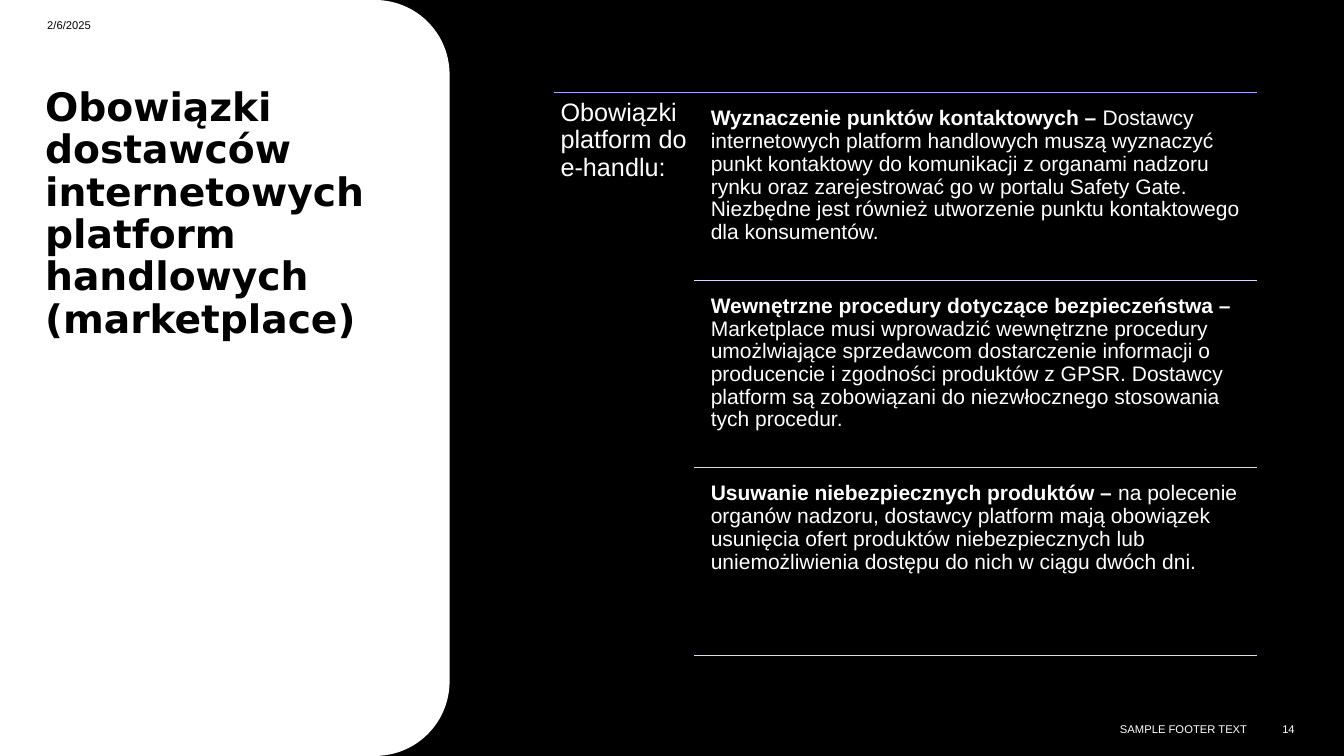
"""Builds the slide on the duties of online marketplace providers."""
from dataclasses import dataclass
from math import cos, pi, sin

from lxml.etree import SubElement
from pptx import Presentation
from pptx.dml.color import RGBColor as Color
from pptx.enum.shapes import MSO_CONNECTOR as Link
from pptx.enum.text import MSO_ANCHOR as Anchor, PP_ALIGN as Align
from pptx.oxml.ns import qn
from pptx.slide import Slide
from pptx.util import Inches, Pt

HUES = {"back": "000000", "panel": "FFFFFF", "dark": "000000",
        "light": "FFFFFF", "top": "B8A0F8", "rule": "DFD6FC"}
WIDE, HIGH = 13.33, 7.5
PANEL, ROUND = 4.46, 0.74
LEFT, SPLIT, RIGHT = 5.49, 6.88, 12.47
TOP, STEP = 0.92, 1.86


@dataclass
class Label:
    box: tuple[float, float, float, float]
    texts: tuple[str, ...]
    size: float
    hue: str = "light"
    font: str = "Arial"
    bold: bool = False
    pad: tuple[float, float] = (0.1, 0.05)
    anchor: Anchor = Anchor.TOP
    align: Align = Align.LEFT
    pitch: float = 1.0
    after: float = 0


@dataclass
class Rule:
    start: float
    level: float
    hue: str


DUTIES = (
    ("Wyznaczenie punktów kontaktowych –",
     " Dostawcy internetowych platform handlowych muszą wyznaczyć punkt "
     "kontaktowy do komunikacji z organami nadzoru rynku oraz zarejestrować "
     "go w portalu Safety Gate. Niezbędne jest również utworzenie punktu "
     "kontaktowego dla konsumentów."),
    ("Wewnętrzne procedury dotyczące bezpieczeństwa –",
     " Marketplace musi wprowadzić wewnętrzne procedury umożlwiające "
     "sprzedawcom dostarczenie informacji o producencie i zgodności produktów "
     "z GPSR. Dostawcy platform są zobowiązani do niezwłocznego stosowania "
     "tych procedur."),
    ("Usuwanie niebezpiecznych produktów –",
     " na polecenie organów nadzoru, dostawcy platform mają obowiązek "
     "usunięcia ofert produktów niebezpiecznych lub uniemożliwienia dostępu "
     "do nich w ciągu dwóch dni."),
)

LABELS = [
    Label((0.35, 0.82, 3.53, 5.95),
          ("Obowiązki dostawców internetowych platform handlowych (marketplace)",),
          28, "dark", "DejaVu Sans", True, pitch=0.9),
    Label((0.37, 0.07, 3, 0.35), ("2/6/2025",), 8, "dark",
          anchor=Anchor.MIDDLE, after=6),
    Label((8.03, 7.03, 4.44, 0.4), ("SAMPLE FOOTER TEXT",), 8,
          anchor=Anchor.MIDDLE, align=Align.RIGHT, after=6),
    Label((12.47, 7.03, 0.47, 0.4), ("14",), 8,
          anchor=Anchor.MIDDLE, align=Align.RIGHT, after=6),
    Label((LEFT, TOP, 1.4, 5.68), ("Obowiązki platform do e-handlu:",), 18,
          pad=(0.07, 0.07), pitch=0.9),
]
LABELS += [Label((6.99, TOP + 0.09 + row * STEP, 5.48, 1.77), duty, 15,
                 bold=True, pad=(0.06, 0.06), pitch=0.9)
           for row, duty in enumerate(DUTIES)]

RULES = [Rule(LEFT, TOP, "top")]
RULES += [Rule(SPLIT, TOP + (row + 1) * STEP, "rule")
          for row in range(len(DUTIES))]


def tint(hue: str) -> Color:
    return Color.from_string(HUES[hue])


def draw_panel(slide: Slide) -> None:
    turns = [pi / 2 * n / 24 for n in range(25)]
    mid = PANEL - ROUND
    upper = [(mid + ROUND * sin(t), ROUND - ROUND * cos(t)) for t in turns]
    lower = [(x, HIGH - y) for x, y in reversed(upper)]
    edge = [(Inches(x), Inches(y)) for x, y in upper + lower + [(0, HIGH)]]
    form = slide.shapes.build_freeform(0, 0)
    form.add_line_segments(edge, close=True)
    panel = form.convert_to_shape()
    panel.shadow.inherit = False
    panel.fill.solid()
    panel.fill.fore_color.rgb = tint("panel")
    panel.line.fill.background()


def draw_label(slide: Slide, label: Label) -> None:
    frame = slide.shapes.add_textbox(*map(Inches, label.box)).text_frame
    frame.word_wrap = True
    frame.vertical_anchor = label.anchor
    frame.margin_left = frame.margin_right = Inches(label.pad[0])
    frame.margin_top = frame.margin_bottom = Inches(label.pad[1])
    para = frame.paragraphs[0]
    para.alignment = label.align
    para.line_spacing = label.pitch
    para.space_after = Pt(label.after)
    for spot, words in enumerate(label.texts):
        run = para.add_run()
        run.text = words
        run.font.name = label.font
        run.font.size = Pt(label.size)
        run.font.bold = label.bold and spot == 0
        run.font.color.rgb = tint(label.hue)


def draw_rule(slide: Slide, rule: Rule) -> None:
    level = Inches(rule.level)
    line = slide.shapes.add_connector(
        Link.STRAIGHT, Inches(rule.start), level, Inches(RIGHT), level)
    line.line.color.rgb = tint(rule.hue)
    line.line.width = Pt(1)
    SubElement(line._element.spPr, qn("a:effectLst"))


def main() -> None:
    deck = Presentation()
    deck.slide_width, deck.slide_height = Inches(WIDE), Inches(HIGH)
    slide = deck.slides.add_slide(deck.slide_layouts[6])
    slide.background.fill.solid()
    slide.background.fill.fore_color.rgb = tint("back")
    draw_panel(slide)
    for rule in RULES:
        draw_rule(slide, rule)
    for label in LABELS:
        draw_label(slide, label)
    deck.save("out.pptx")


if __name__ == "__main__":
    main()
